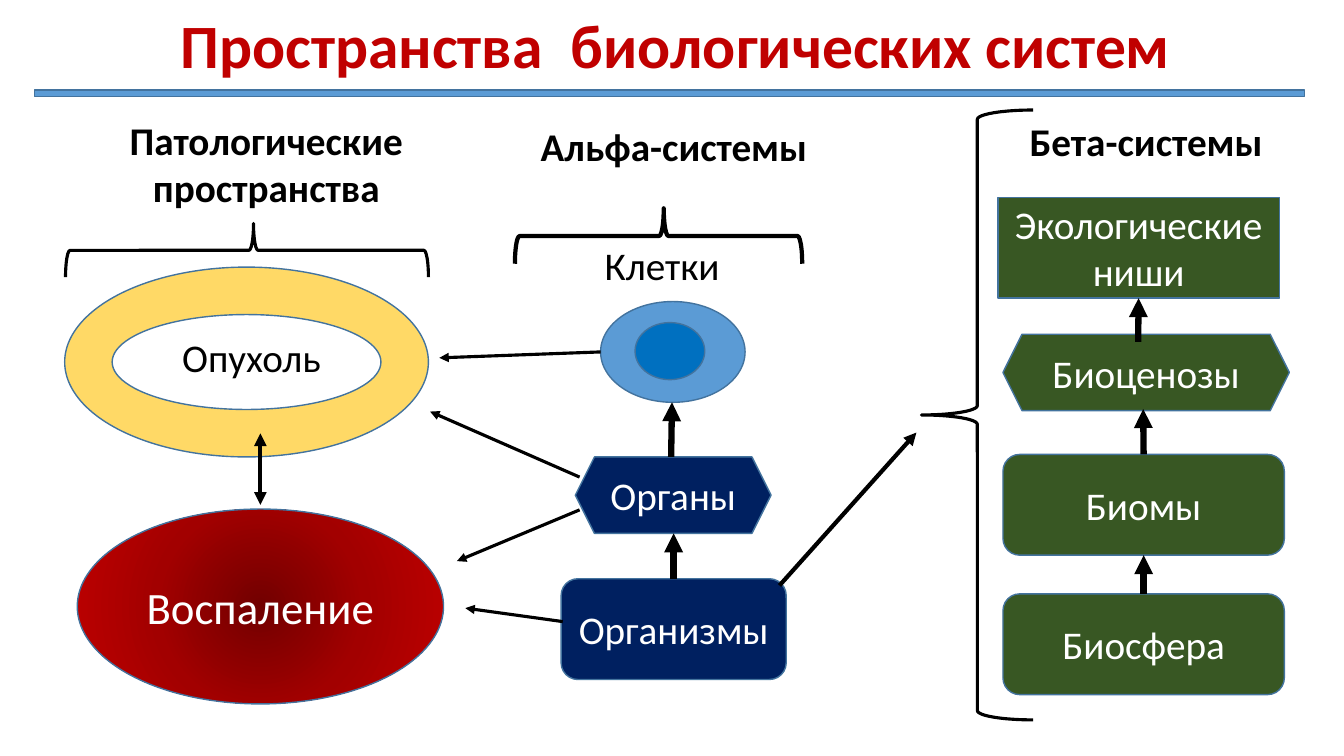
"""Build the slide on the spaces of biological systems."""

from dataclasses import dataclass
from typing import Any, Optional

from lxml.etree import SubElement
from pptx import Presentation
from pptx.dml.color import RGBColor
from pptx.enum.shapes import MSO_CONNECTOR, MSO_SHAPE
from pptx.enum.text import MSO_ANCHOR, MSO_AUTO_SIZE, PP_ALIGN
from pptx.oxml import parse_xml
from pptx.oxml.ns import nsdecls, qn
from pptx.util import Emu, Inches, Pt

COLUMNS, ROWS = 160, 90
CELL = Inches(7.5) / ROWS
FONT = "Calibri"

BLACK = RGBColor(0x00, 0x00, 0x00)
WHITE = RGBColor(0xFF, 0xFF, 0xFF)
RED = RGBColor(0xC0, 0x00, 0x00)
MID_RED = RGBColor(0xA2, 0x00, 0x00)
DARK_RED = RGBColor(0x72, 0x00, 0x00)
NAVY = RGBColor(0x00, 0x20, 0x60)
GREEN = RGBColor(0x38, 0x57, 0x23)
YELLOW = RGBColor(0xFF, 0xD9, 0x66)
SKY = RGBColor(0x5B, 0x9B, 0xD5)
BLUE = RGBColor(0x00, 0x70, 0xC0)
OUTLINE = RGBColor(0x43, 0x73, 0x9E)

INFLAMMATION_STOPS = {0: DARK_RED, 50: MID_RED, 100: RED}


@dataclass(frozen=True)
class Box:
    """Place on the grid in columns and rows."""

    column: float
    row: float
    width: float
    height: float

    def lengths(self) -> tuple[Emu, ...]:
        """Return left, top, width and height."""
        return tuple(map(grid, (self.column, self.row, self.width, self.height)))


@dataclass(frozen=True)
class Node:
    """Filled shape, with or without a label."""

    kind: MSO_SHAPE
    box: Box
    fill: Optional[RGBColor]
    text: str = ""
    size: int = 28


@dataclass(frozen=True)
class Label:
    """Free text on the slide."""

    text: str
    box: Box
    bold: bool = True
    wrap: bool = False
    alignment: PP_ALIGN = PP_ALIGN.LEFT


@dataclass(frozen=True)
class Brace:
    """Brace that gathers one group of systems."""

    box: Box
    weight: float = 2.25
    rotation: int = 90
    point: float = 0.482


@dataclass(frozen=True)
class Arrow:
    """Arrow between two grid points, joined to rectangles where they meet."""

    start: tuple[float, float]
    end: tuple[float, float]
    weight: float = 2.25
    source: str = ""
    target: str = ""
    two_way: bool = False


NODES = [
    Node(MSO_SHAPE.RECTANGLE, Box(4.1, 10.7, 151.2, 0.8), SKY),
    Node(MSO_SHAPE.ROUNDED_RECTANGLE, Box(66.8, 68.9, 26.8, 12), NAVY, "Организмы"),
    Node(MSO_SHAPE.HEXAGON, Box(68.5, 54.4, 23.3, 9.1), NAVY, "Органы"),
    Node(MSO_SHAPE.OVAL, Box(71.5, 35.9, 17.2, 12), SKY),
    Node(MSO_SHAPE.OVAL, Box(75.6, 38.4, 8.3, 6.8), BLUE),
    Node(MSO_SHAPE.RECTANGLE, Box(118.8, 23.5, 33.5, 12), GREEN, "Экологические ниши"),
    Node(MSO_SHAPE.HEXAGON, Box(119.4, 39.8, 34.1, 9.1), GREEN, "Биоценозы"),
    Node(MSO_SHAPE.ROUNDED_RECTANGLE, Box(119.4, 54.1, 33.5, 12), GREEN, "Биомы"),
    Node(MSO_SHAPE.ROUNDED_RECTANGLE, Box(119.4, 70.7, 33.5, 12), GREEN, "Биосфера"),
    Node(MSO_SHAPE.DONUT, Box(7.7, 31.8, 43.3, 22.6), YELLOW),
    Node(MSO_SHAPE.OVAL, Box(9.2, 60.6, 43.6, 23.2), None, "Воспаление", 32),
]
LABELS = [
    Label("Патологические пространства", Box(13.9, 13.3, 35.6, 12.5),
          wrap=True, alignment=PP_ALIGN.CENTER),
    Label("Альфа-системы", Box(63.2, 14, 34.6, 6.8)),
    Label("Бета-системы", Box(121.4, 13.4, 30.5, 6.8)),
    Label("Клетки", Box(70.8, 28.1, 16.3, 6.8), bold=False),
    Label("Опухоль", Box(20.5, 39.1, 19.1, 6.8), bold=False),
]
BRACES = [
    Brace(Box(26.2, 8.2, 6.4, 43.2)),
    Brace(Box(75.1, 11, 6.6, 34.2), weight=3),
    Brace(Box(109.7, 13.1, 13.3, 72.6), rotation=0, point=0.5),
]
ARROWS = [
    Arrow((80.2, 68.9), (80.2, 63.5), 4.5, source="Организмы"),
    Arrow((79.9, 54.4), (80, 47.9), 4.5),
    Arrow((136.1, 70.7), (136.1, 66.1), 4.5, source="Биосфера", target="Биомы"),
    Arrow((136.1, 54.1), (136.1, 48.7), 4.5, source="Биомы"),
    Arrow((135.5, 40.7), (135.5, 35.5), 4.5, target="Экологические ниши"),
    Arrow((92.8, 69.7), (109.1, 51.5), 3),
    Arrow((69, 56.8), (51.2, 49)),
    Arrow((71.5, 41.9), (52.3, 42.6)),
    Arrow((69, 60.7), (54.4, 66.8)),
    Arrow((67, 74), (55.4, 72.4)),
    Arrow((31, 51.6), (31, 60.1), 3, two_way=True),
]


def grid(cells: float) -> Emu:
    """Turn grid cells into a length."""
    return Emu(round(cells * CELL))


def assign(target: Any, values: dict[str, Any]) -> None:
    """Set every named attribute on the target."""
    for name, value in values.items():
        setattr(target, name, value)


def write(shape: Any, text: str, color: RGBColor, frame: dict[str, Any],
          paragraph_format: dict[str, Any], font: dict[str, Any]) -> None:
    """Write one formatted paragraph into a shape."""
    assign(shape.text_frame, frame)
    paragraph = shape.text_frame.paragraphs[0]
    assign(paragraph, paragraph_format)
    run = paragraph.add_run()
    run.text = text
    assign(run.font, {"name": FONT, **font})
    run.font.color.rgb = color


def fill_radially(shape: Any, stops: dict[int, RGBColor]) -> None:
    """Fill a shape with a gradient that spreads from its centre."""
    marks = "".join(f'<a:gs pos="{share * 1000}"><a:srgbClr val="{color}"/></a:gs>'
                    for share, color in stops.items())
    gradient = parse_xml(
        f'<a:gradFill {nsdecls("a")} rotWithShape="1"><a:gsLst>{marks}</a:gsLst>'
        '<a:path path="circle"><a:fillToRect l="50000" t="50000" r="50000" b="50000"/>'
        '</a:path></a:gradFill>')
    shape._element.spPr.find(qn("a:prstGeom")).addnext(gradient)


def draw_node(slide: Any, node: Node) -> Any:
    """Draw a filled shape and its label."""
    shape = slide.shapes.add_shape(node.kind, *node.box.lengths())
    shape.shadow.inherit = False
    if node.fill is None:
        fill_radially(shape, INFLAMMATION_STOPS)
    else:
        shape.fill.solid()
        shape.fill.fore_color.rgb = node.fill
    shape.line.color.rgb = OUTLINE
    shape.line.width = Pt(1)
    if node.text:
        write(shape, node.text, WHITE,
              {"word_wrap": True, "vertical_anchor": MSO_ANCHOR.MIDDLE},
              {"alignment": PP_ALIGN.CENTER}, {"size": Pt(node.size)})
    return shape


def draw_label(slide: Any, label: Label) -> None:
    """Draw a text box that fits its text."""
    write(slide.shapes.add_textbox(*label.box.lengths()), label.text, BLACK,
          {"word_wrap": label.wrap, "auto_size": MSO_AUTO_SIZE.SHAPE_TO_FIT_TEXT},
          {"alignment": label.alignment}, {"size": Pt(28), "bold": label.bold})


def draw_brace(slide: Any, brace: Brace) -> None:
    """Draw an unfilled brace."""
    shape = slide.shapes.add_shape(MSO_SHAPE.LEFT_BRACE, *brace.box.lengths())
    shape.shadow.inherit = False
    shape.rotation = brace.rotation
    shape.adjustments[1] = brace.point
    shape.fill.background()
    shape.line.color.rgb = BLACK
    shape.line.width = Pt(brace.weight)


def draw_arrow(slide: Any, arrow: Arrow, shapes: dict[str, Any]) -> None:
    """Draw a straight arrow and join its ends."""
    connector = slide.shapes.add_connector(
        MSO_CONNECTOR.STRAIGHT, *map(grid, arrow.start + arrow.end))
    if arrow.source:
        connector.begin_connect(shapes[arrow.source], 0)
    if arrow.target:
        connector.end_connect(shapes[arrow.target], 2)
    connector.line.color.rgb = BLACK
    connector.line.width = Pt(arrow.weight)
    for end in ("headEnd", "tailEnd") if arrow.two_way else ("tailEnd",):
        SubElement(connector.line._get_or_add_ln(), qn(f"a:{end}"), type="triangle")
    SubElement(connector._element.spPr, qn("a:effectLst"))


def main() -> None:
    """Draw the slide and save it."""
    presentation = Presentation()
    assign(presentation, {"slide_width": grid(COLUMNS), "slide_height": grid(ROWS)})
    slide = presentation.slides.add_slide(presentation.slide_layouts[5])
    title = slide.shapes.title
    assign(title, dict(zip(("left", "top", "width", "height"),
                           Box(11.5, 0, 138, 11.6).lengths())))
    write(title, "Пространства  биологических систем", RED,
          {"vertical_anchor": MSO_ANCHOR.MIDDLE, "auto_size": MSO_AUTO_SIZE.NONE},
          {"alignment": PP_ALIGN.CENTER, "line_spacing": 0.9},
          {"size": Pt(44), "bold": True})
    shapes = {node.text: draw_node(slide, node) for node in NODES}
    for label in LABELS:
        draw_label(slide, label)
    for brace in BRACES:
        draw_brace(slide, brace)
    for arrow in ARROWS:
        draw_arrow(slide, arrow, shapes)
    presentation.save("out.pptx")


if __name__ == "__main__":
    main()
